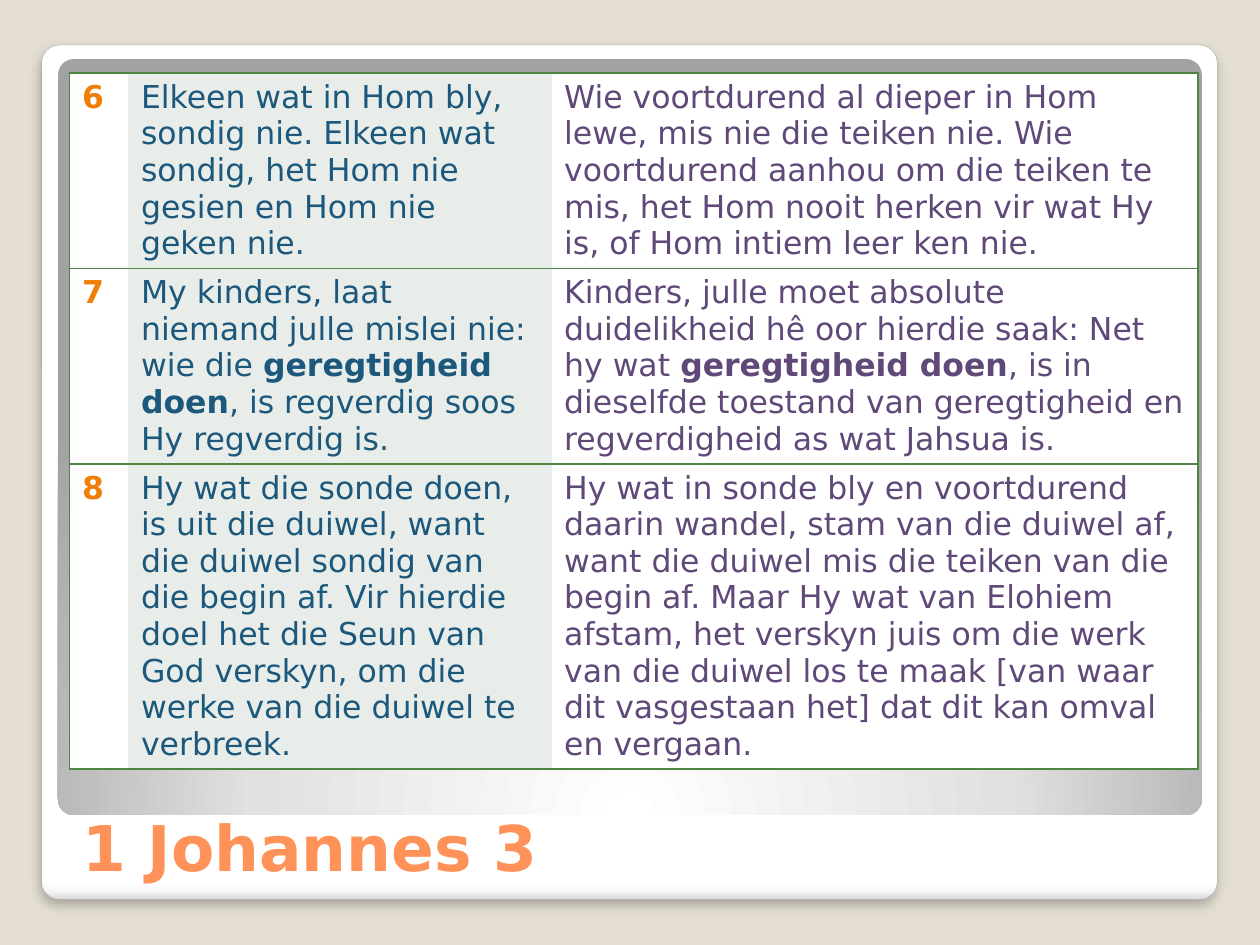
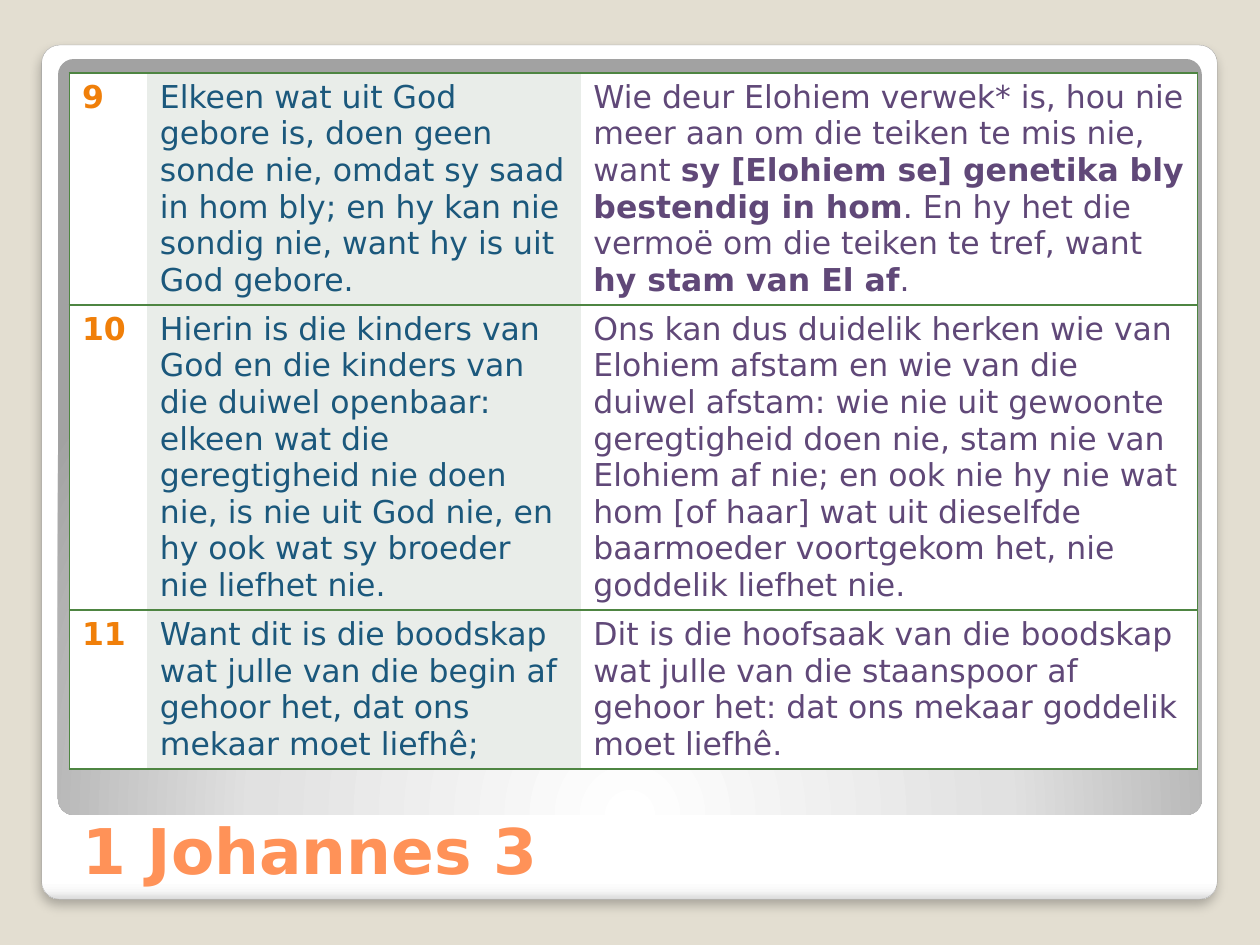
from lxml import etree
from pptx import Presentation
from pptx.dml.color import RGBColor
from pptx.enum.shapes import MSO_SHAPE
from pptx.enum.text import MSO_ANCHOR, MSO_AUTO_SIZE, PP_ALIGN
from pptx.oxml import parse_xml
from pptx.oxml.ns import qn
from pptx.util import Cm, Pt

ROUND = MSO_SHAPE.ROUNDED_RECTANGLE
LOW = MSO_ANCHOR.BOTTOM
FIXED = MSO_AUTO_SIZE.NONE
LEFT = PP_ALIGN.LEFT

SAND = RGBColor(0xE3, 0xDE, 0xD1)
WHITE = RGBColor(0xFF, 0xFF, 0xFF)
CLOUD = RGBColor(0xF7, 0xF7, 0xF7)
ASH = RGBColor(0xDA, 0xDA, 0xDA)
SILVER = RGBColor(0xE1, 0xE1, 0xE1)
STEEL = RGBColor(0xA2, 0xA2, 0xA2)
EDGE = RGBColor(0xA4, 0xA4, 0xA4)
BLACK = RGBColor(0, 0, 0)
CORAL = RGBColor(0xFF, 0x92, 0x58)
ORANGE = RGBColor(0xF0, 0x7F, 0x09)
BLUE = RGBColor(0x1B, 0x58, 0x7C)
PURPLE = RGBColor(0x60, 0x48, 0x78)
MIST = RGBColor(0xE9, 0xED, 0xE9)
GREEN = RGBColor(0x4E, 0x85, 0x42)

FONT = "DejaVu Sans"
SPACE = 'xmlns:a="http://schemas.openxmlformats.org/drawingml/2006/main"'
PLAIN = "{2D5ABB26-0587-4C30-8999-92F81FD0307C}"
TITLE = "1 Johannes 3"
CARD = (Cm(0.84), Cm(0.91), Cm(23.7), Cm(17.22))
PANEL = (Cm(1.17), Cm(1.19), Cm(23.06), Cm(15.24))
GRID = (Cm(1.4), Cm(1.47), Cm(22.73), Cm(14.48))
ROW = Cm(1.04)

COLUMNS = [
    (ORANGE, WHITE, ("lnL", "lnT", "lnB")),
    (BLUE, MIST, ("lnT", "lnB")),
    (PURPLE, WHITE, ("lnR", "lnT", "lnB")),
]

PAGES = [
    {
        "head": (Cm(1.4), Cm(15.67), Cm(22.73), Cm(2.29)),
        "widths": (1.19, 8.53, 13.03),
        "verses": [
            ("**6**",
             "Elkeen wat in Hom bly, sondig nie. Elkeen wat sondig, het Hom nie "
             "gesien en Hom nie geken nie.",
             "Wie voortdurend al dieper in Hom lewe, mis nie die teiken nie. Wie "
             "voortdurend aanhou om die teiken te mis, het Hom nooit herken vir "
             "wat Hy is, of Hom intiem leer ken nie."),
            ("**7**",
             "My kinders, laat niemand julle mislei nie: wie die **geregtigheid "
             "doen**, is regverdig soos Hy regverdig is.",
             "Kinders, julle moet absolute duidelikheid hê oor hierdie saak: Net "
             "hy wat **geregtigheid doen**, is in dieselfde toestand van "
             "geregtigheid en regverdigheid as wat Jahsua is."),
            ("**8**",
             "Hy wat die sonde doen, is uit die duiwel, want die duiwel sondig "
             "van die begin af. Vir hierdie doel het die Seun van God verskyn, "
             "om die werke van die duiwel te verbreek.",
             "Hy wat in sonde bly en voortdurend daarin wandel, stam van die "
             "duiwel af, want die duiwel mis die teiken van die begin af. Maar "
             "Hy wat van Elohiem afstam, het verskyn juis om die werk van die "
             "duiwel los te maak [van waar dit vasgestaan het] dat dit kan omval "
             "en vergaan."),
        ],
    },
    {
        "head": (Cm(1.4), Cm(15.09), Cm(22.73), Cm(2.92)),
        "widths": (1.57, 8.74, 12.43),
        "verses": [
            ("**9**",
             "Elkeen wat uit God gebore is, doen geen sonde nie, omdat sy saad "
             "in hom bly; en hy kan nie sondig nie, want hy is uit God gebore.",
             "Wie deur Elohiem verwek* is, hou nie meer aan om die teiken te mis "
             "nie, want **sy [Elohiem se] genetika bly bestendig in hom**. En hy "
             "het die vermoë om die teiken te tref, want **hy stam van El af**."),
            ("**10**",
             "Hierin is die kinders van God en die kinders van die duiwel "
             "openbaar: elkeen wat die geregtigheid nie doen nie, is nie uit God "
             "nie, en hy ook wat sy broeder nie liefhet nie.",
             "Ons kan dus duidelik herken wie van Elohiem afstam en wie van die "
             "duiwel afstam: wie nie uit gewoonte geregtigheid doen nie, stam "
             "nie van Elohiem af nie; en ook nie hy nie wat hom [of haar] wat "
             "uit dieselfde baarmoeder voortgekom het, nie goddelik liefhet nie."),
            ("**11**",
             "Want dit is die boodskap wat julle van die begin af gehoor het, "
             "dat ons mekaar moet liefhê;",
             "Dit is die hoofsaak van die boodskap wat julle van die staanspoor "
             "af gehoor het: dat ons mekaar goddelik moet liefhê."),
        ],
    },
]


def write(frame, text, size=18, color=BLUE):
    """Fill a text frame, with the parts between double stars in bold."""
    para = frame.paragraphs[0]
    para.alignment = LEFT
    for index, part in enumerate(text.split("**")):
        if part:
            run = para.add_run()
            run.text = part
            font = run.font
            font.name, font.size, font.bold = FONT, Pt(size), index % 2 == 1
            font.color.rgb = color


def blend(shape, stops, way):
    """Give a shape a gradient fill with the stops and direction named."""
    marks = "".join(f'<a:gs pos="{pos * 1000}"><a:srgbClr val="{color}"/></a:gs>'
                    for pos, color in stops)
    shape.fill.background()
    old = shape.element.spPr.find(qn("a:noFill"))
    old.getparent().replace(old, parse_xml(
        f'<a:gradFill {SPACE} rotWithShape="1"><a:gsLst>{marks}</a:gsLst>{way}</a:gradFill>'))


def plate(slide, box, stops, way):
    """Add a softly rounded plate with a gradient and no outline."""
    shape = slide.shapes.add_shape(ROUND, *box)
    shape.adjustments[0] = 0.021
    shape.shadow.inherit = False
    shape.line.fill.background()
    blend(shape, stops, way)
    return shape


def frame(slide, layout):
    """Build the card and its panel, and move them to the shared layout."""
    card = plate(slide, CARD, [(0, WHITE), (98, WHITE), (99, CLOUD), (100, ASH)],
                 '<a:lin ang="5400000" scaled="0"/>')
    card.line.color.rgb = EDGE
    card.line.width = Pt(0.16)
    card.element.spPr.find(qn("a:effectLst")).append(parse_xml(
        f'<a:outerShdw {SPACE} blurRad="{Pt(6)}" dist="{Pt(4)}" dir="5400000" '
        f'algn="t" rotWithShape="0"><a:srgbClr val="{BLACK}"><a:alpha val="25000"/>'
        '</a:srgbClr></a:outerShdw>'))
    panel = plate(slide, PANEL, [(0, WHITE), (55, SILVER), (100, STEEL)],
                  '<a:path path="circle"><a:fillToRect l="50000" t="175000" '
                  'r="50000" b="-75000"/></a:path>')
    for index, shape in enumerate((card, panel)):
        shape.element.nvSpPr.cNvPr.set("id", str(20 + index))
        layout.shapes.element.insert(2 + index, shape.element)


def head(slide, box):
    """Place and format the slide title."""
    title = slide.shapes.title
    title.left, title.top, title.width, title.height = box
    text = title.text_frame
    text.auto_size = FIXED
    text.vertical_anchor = LOW
    write(text, f"**{TITLE}**", size=36, color=CORAL)


def rule(cell, sides):
    """Draw green borders on the named sides of a cell."""
    props = cell._tc.get_or_add_tcPr()
    for side in sides:
        line = etree.SubElement(props, qn(f"a:{side}"), w=str(Pt(1)))
        fill = etree.SubElement(line, qn("a:solidFill"))
        etree.SubElement(fill, qn("a:srgbClr"), val=str(GREEN))


def grid(slide, box, widths, verses):
    """Set the verses side by side in a table."""
    holder = slide.shapes.add_table(len(verses), len(widths), *box)
    table = holder.table
    table.first_row = table.horz_banding = False
    next(holder.element.iter(qn("a:tableStyleId"))).text = PLAIN
    for column, width in zip(table.columns, widths):
        column.width = Cm(width)
    for row, verse in zip(table.rows, verses):
        row.height = ROW
        for cell, text, (ink, back, sides) in zip(row.cells, verse, COLUMNS):
            rule(cell, sides)
            cell.fill.solid()
            cell.fill.fore_color.rgb = back
            write(cell.text_frame, text, color=ink)
    holder.height = box[3]


def main():
    """Build the deck and save it."""
    deck = Presentation()
    deck.slide_width, deck.slide_height = Cm(25.4), Cm(19.05)
    back = deck.slide_master.background.fill
    back.solid()
    back.fore_color.rgb = SAND
    layout = deck.slide_layouts.get_by_name("Title Only")
    for page in PAGES:
        slide = deck.slides.add_slide(layout)
        head(slide, page["head"])
        grid(slide, GRID, page["widths"], page["verses"])
    frame(slide, layout)
    deck.save("out.pptx")


if __name__ == "__main__":
    main()
